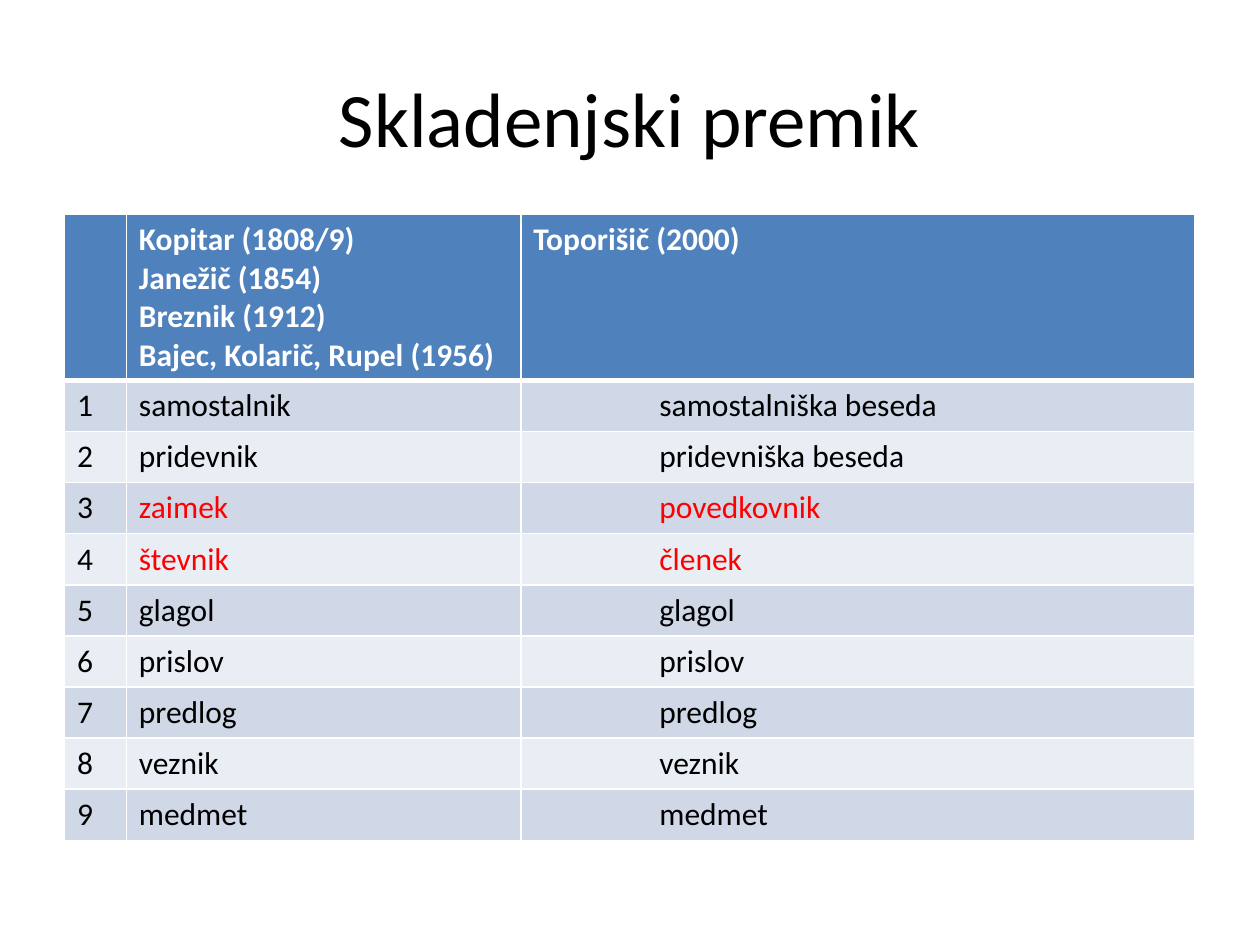
from pptx import Presentation
from pptx import util as u
from pptx.dml.color import RGBColor
from pptx.enum import text
from pptx.oxml import parse_xml
from pptx.oxml.ns import nsdecls

COLORS = {
    "ink": "000000",
    "white": "FFFFFF",
    "changed": "FF0000",
    "header": "4F81BD",
    "odd": "D0D8E8",
    "even": "E9EDF4",
}
HEADER = [
    "",
    "Kopitar (1808/9)\nJanežič (1854)\nBreznik (1912)\nBajec, Kolarič, Rupel (1956)",
    "Toporišič (2000)",
]
WORD_CLASSES = [
    ("samostalnik", "samostalniška beseda"),
    ("pridevnik", "pridevniška beseda"),
    ("zaimek", "povedkovnik"),
    ("števnik", "členek"),
    ("glagol", "glagol"),
    ("prislov", "prislov"),
    ("predlog", "predlog"),
    ("veznik", "veznik"),
    ("medmet", "medmet"),
]
CHANGED_ROWS = (3, 4)


def write(frame, content, size=18, color="ink", bold=False, align=None, margin=0, indent=0):
    for number, line in enumerate(content.split("\n")):
        para = frame.add_paragraph() if number else frame.paragraphs[0]
        para.alignment = align
        if margin:
            properties = para._p.get_or_add_pPr()
            properties.set("marL", str(u.Pt(margin)))
            properties.set("indent", str(u.Pt(indent)))
        font = para.font
        if line:
            span = para.add_run()
            span.text = line
            font = span.font
        font.name = "Calibri"
        font.size = u.Pt(size)
        font.bold = bold
        font.color.rgb = RGBColor.from_string(COLORS[color])


class Page:
    """Draws the elements of one slide in a shared style."""

    def __init__(self, deck):
        self.slide = deck.slides.add_slide(deck.slide_layouts[6])

    def title(self, content, left, top, width, height):
        box = self.slide.shapes.add_textbox(u.Pt(left), u.Pt(top), u.Pt(width), u.Pt(height))
        frame = box.text_frame
        frame.word_wrap = True
        frame.vertical_anchor = text.MSO_ANCHOR.MIDDLE
        write(frame, content, size=44, align=text.PP_ALIGN.CENTER)

    def table(self, left, top, widths, heights):
        shape = self.slide.shapes.add_table(
            len(heights), len(widths), u.Pt(left), u.Pt(top), u.Pt(sum(widths)), u.Pt(sum(heights))
        )
        for column, width in zip(shape.table.columns, widths):
            column.width = u.Pt(width)
        for row, height in zip(shape.table.rows, heights):
            row.height = u.Pt(height)
        return shape.table

    def cell(self, cell, content, fill, top=1, bottom=1, **style):
        properties = cell._tc.get_or_add_tcPr()
        for side, width in (("L", 1), ("R", 1), ("T", top), ("B", bottom)):
            properties.append(parse_xml(
                f'<a:ln{side} {nsdecls("a")} w="{u.Pt(width)}"><a:solidFill>'
                f'<a:srgbClr val="{COLORS["white"]}"/></a:solidFill></a:ln{side}>'
            ))
        cell.fill.solid()
        cell.fill.fore_color.rgb = RGBColor.from_string(COLORS[fill])
        write(cell.text_frame, content, **style)


def main():
    deck = Presentation()
    deck.slide_width, deck.slide_height = u.Pt(720), u.Pt(540)
    page = Page(deck)
    page.title("Skladenjski premik", 36, 21.6, 648, 90)

    table = page.table(36.9, 122.6, [35.3, 225.4, 385.4], [94.8] + [29.2] * len(WORD_CLASSES))
    for column, content in enumerate(HEADER):
        page.cell(table.cell(0, column), content, "header", bottom=3, color="white", bold=True)
    for row, (old, new) in enumerate(WORD_CLASSES, start=1):
        fill = "odd" if row % 2 else "even"
        color = "changed" if row in CHANGED_ROWS else "ink"
        top = 3 if row == 1 else 1
        page.cell(table.cell(row, 0), str(row), fill, top)
        page.cell(table.cell(row, 1), old, fill, top, color=color, margin=27, indent=-27)
        page.cell(table.cell(row, 2), new, fill, top, color=color, margin=108, indent=-36)

    deck.save("out.pptx")


if __name__ == "__main__":
    main()
